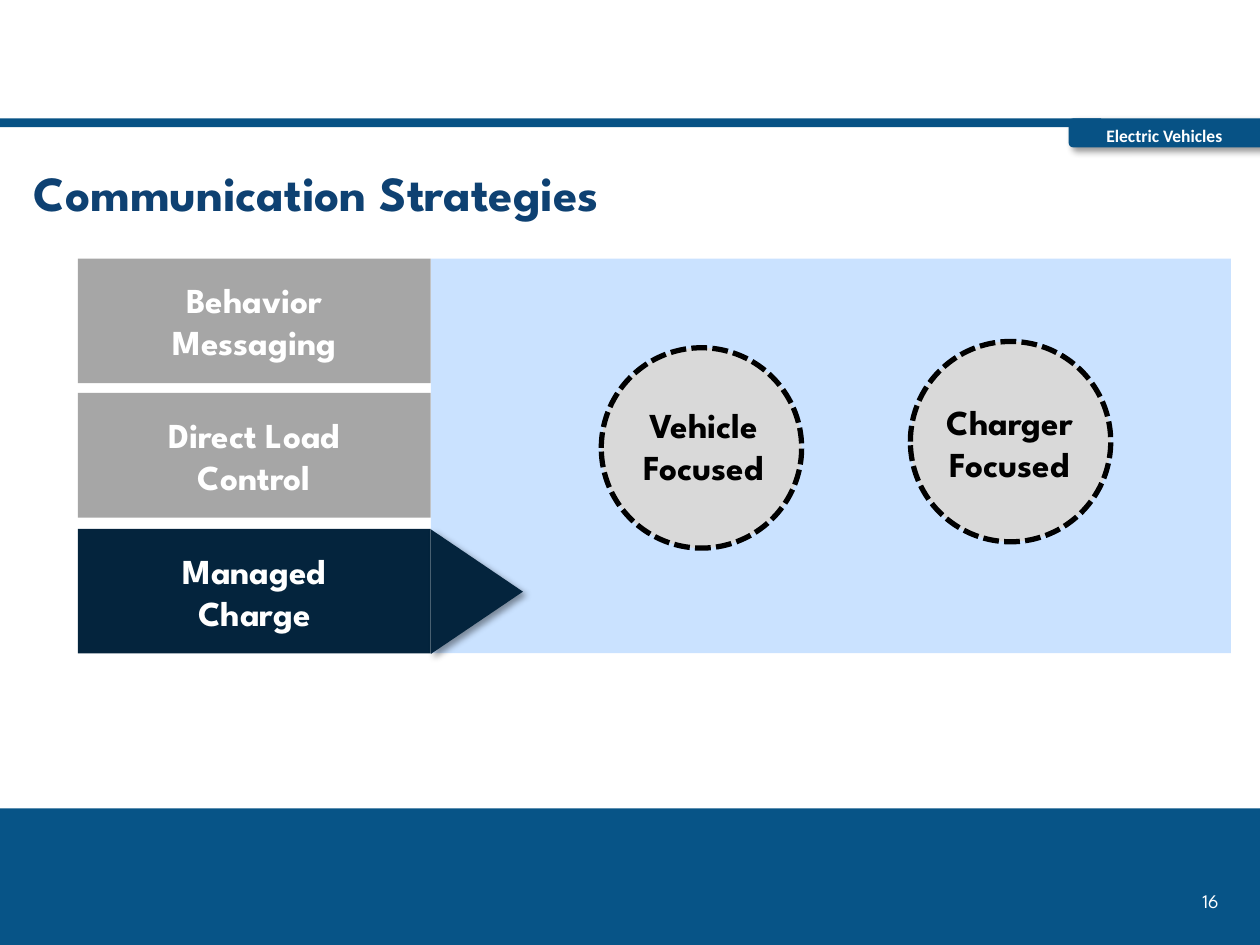
from dataclasses import dataclass
from typing import Optional

import pptx
import pptx.dml.color
import pptx.enum.dml
import pptx.enum.shapes
import pptx.enum.text
import pptx.oxml
import pptx.oxml.ns
import pptx.util

Pt = pptx.util.Pt
RGBColor = pptx.dml.color.RGBColor
MSO_SHAPE = pptx.enum.shapes.MSO_SHAPE
PP_ALIGN = pptx.enum.text.PP_ALIGN

FOOTER_BLUE = RGBColor(0x07, 0x54, 0x87)
HEADER_BLUE = RGBColor(0x07, 0x52, 0x85)
TITLE_BLUE = RGBColor(0x0E, 0x41, 0x72)
PANEL_BLUE = RGBColor(0xCA, 0xE2, 0xFF)
NAVY = RGBColor(0x04, 0x24, 0x3D)
GRAY = RGBColor(0xA6, 0xA6, 0xA6)
LIGHT_GRAY = RGBColor(0xD9, 0xD9, 0xD9)
WHITE = RGBColor(0xFF, 0xFF, 0xFF)
BLACK = RGBColor(0, 0, 0)

SHADOW = (
    f'<a:effectLst {pptx.oxml.ns.nsdecls("a")}>'
    '<a:outerShdw blurRad="50800" dist="38100" dir="2700000" algn="tl" rotWithShape="0">'
    '<a:srgbClr val="000000"><a:alpha val="40000"/></a:srgbClr>'
    '</a:outerShdw></a:effectLst>'
)


@dataclass
class Box:
    x: float
    y: float
    w: float
    h: float

    def pts(self) -> tuple:
        return Pt(self.x), Pt(self.y), Pt(self.w), Pt(self.h)


@dataclass
class Strategy:
    lines: tuple
    y: float
    color: RGBColor


@dataclass
class Focus:
    text: str
    circle: Box
    label: Box


STRATEGIES = [
    Strategy(("Behavior Messaging",), 147.8, GRAY),
    Strategy(("Direct Load", "Control"), 224.6, GRAY),
    Strategy(("Managed Charge",), 302.2, NAVY),
]
FOCUSES = [
    Focus("Vehicle Focused", Box(343.6, 198.7, 114.5, 114.5), Box(331.2, 226.8, 141.8, 55.4)),
    Focus("Charger Focused", Box(520.2, 195.1, 114.5, 114.5), Box(506.2, 225.4, 141.8, 55.4)),
]
BAR_X, BAR_W, BAR_H = 44.6, 201.6, 71.2
LABEL_W, LABEL_H = 136, 60


def add_shape(s, kind, box: Box, fill: Optional[RGBColor] = None, shadow: bool = False):
    sp = s.shapes.add_shape(kind, *box.pts())
    sp.line.fill.background()
    if fill is None:
        sp.fill.background()
    else:
        sp.fill.solid()
        sp.fill.fore_color.rgb = fill
    if shadow:
        sp._element.spPr.append(pptx.oxml.parse_xml(SHADOW))
    else:
        sp.shadow.inherit = False
    return sp


def set_text(sp, *lines: str, size: float = 20, color: RGBColor = WHITE, bold: bool = True,
             font: str = "League Spartan", align=PP_ALIGN.CENTER) -> None:
    tf = sp.text_frame
    tf.word_wrap = True
    tf.vertical_anchor = pptx.enum.text.MSO_ANCHOR.MIDDLE
    for i, line in enumerate(lines):
        p = tf.add_paragraph() if i else tf.paragraphs[0]
        p.alignment = align
        r = p.add_run()
        r.text = line
        r.font.name, r.font.size, r.font.bold = font, Pt(size), bold
        r.font.color.rgb = color


def add_text(s, box: Box, text: str, **fmt) -> None:
    set_text(s.shapes.add_textbox(*box.pts()), text, **fmt)


def add_strategy(s, item: Strategy) -> None:
    add_shape(s, MSO_SHAPE.RECTANGLE, Box(BAR_X, item.y, BAR_W, BAR_H), item.color)
    label = Box(BAR_X + (BAR_W - LABEL_W) / 2, item.y + (BAR_H - LABEL_H) / 2, LABEL_W, LABEL_H)
    set_text(add_shape(s, MSO_SHAPE.ROUNDED_RECTANGLE, label), *item.lines)


def add_focus(s, item: Focus) -> None:
    sp = add_shape(s, MSO_SHAPE.OVAL, item.circle, LIGHT_GRAY)
    sp.line.color.rgb = BLACK
    sp.line.width = Pt(3)
    # SQUARE_DOT is the "sysDash" preset in the file format
    sp.line.dash_style = pptx.enum.dml.MSO_LINE.SQUARE_DOT
    add_text(s, item.label, item.text, color=BLACK)


def main() -> None:
    prs = pptx.Presentation()
    prs.slide_width, prs.slide_height = Pt(720), Pt(540)
    s = prs.slides.add_slide(prs.slide_layouts[6])

    # Footer band, title and slide number
    add_shape(s, MSO_SHAPE.RECTANGLE, Box(0, 462, 720, 78), FOOTER_BLUE)
    add_text(s, Box(12.2, 87.1, 691.2, 44.6), "Communication Strategies",
             size=28, color=TITLE_BLUE, align=PP_ALIGN.LEFT)
    add_text(s, Box(671.8, 503.3, 31.7, 23), "16", size=11, bold=False, align=PP_ALIGN.RIGHT)

    # Header rule with section tab
    add_shape(s, MSO_SHAPE.ROUNDED_RECTANGLE, Box(610.6, 67.7, 115.9, 16.6), HEADER_BLUE, shadow=True)
    add_shape(s, MSO_SHAPE.RECTANGLE, Box(0, 67.7, 629.3, 5), HEADER_BLUE)
    add_text(s, Box(610.6, 67.7, 109.4, 19.4), "Electric Vehicles", size=10, font="Calibri")

    # Panel and strategy bars
    add_shape(s, MSO_SHAPE.RECTANGLE, Box(246.2, 147.8, 457.2, 225.4), PANEL_BLUE)
    for item in STRATEGIES:
        add_strategy(s, item)

    # Pointer from the active strategy into the panel
    pointer = add_shape(s, MSO_SHAPE.ISOSCELES_TRIANGLE, Box(236.9, 311.8, 71.2, 52.6), NAVY, shadow=True)
    pointer.rotation = 90

    # Focus circles
    for item in FOCUSES:
        add_focus(s, item)

    prs.save("out.pptx")


if __name__ == "__main__":
    main()
